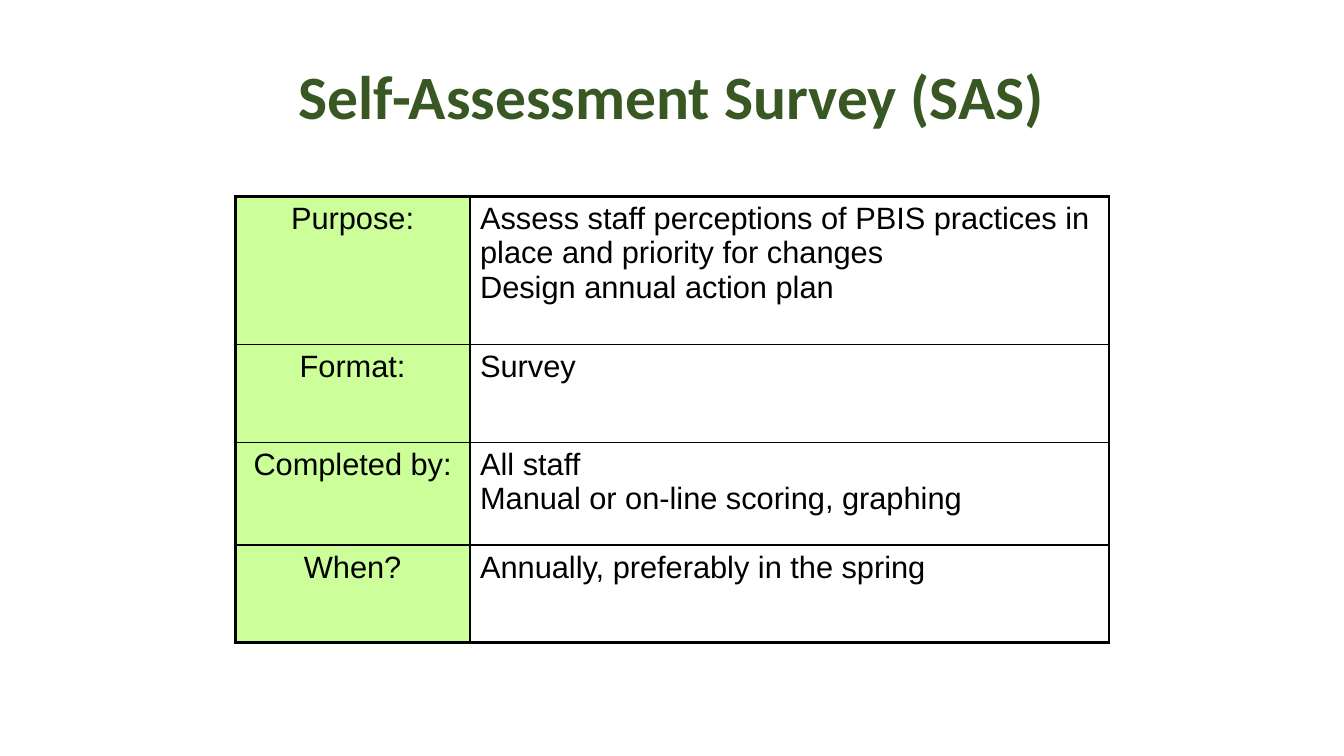
from dataclasses import dataclass

from lxml import etree
from pptx import Presentation
from pptx.dml.color import RGBColor
from pptx.enum import text
from pptx.oxml import ns
from pptx.util import Pt


@dataclass(frozen=True)
class Theme:
    title_font: str = "Calibri"
    body_font: str = "Arial"
    title_size: int = 44
    body_size: int = 22
    title_color: str = "385723"
    ink: str = "000000"
    label_fill: str = "CCFF99"
    outer_line: float = 2.25
    inner_line: float = 1


THEME = Theme()
TITLE_BOX = (156, 29, 648, 84)
TABLE_BOX = (168, 140.4, 624, 318.5)
COLUMN_WIDTHS = (167.75, 456.5)
ROW_HEIGHTS = (105.75, 69.75, 73.5, 69.75)
SURVEY_FACTS = [
    ("Purpose:", "Assess staff perceptions of PBIS practices in place "
                 "and priority for changes\nDesign annual action plan"),
    ("Format:", "Survey"),
    ("Completed by:", "All staff\nManual or on-line scoring, graphing"),
    ("When?", "Annually, preferably in the spring"),
]


def style_para(para, font, size, color, align, bold=False):
    para.alignment = align
    for span in para.runs:
        span.font.name = font
        span.font.size = Pt(size)
        span.font.bold = bold
        span.font.color.rgb = RGBColor.from_string(color)


def set_borders(cell, widths):
    """Draw the cell's sides; widths maps L, R, T, B, in that order, to points."""
    props = cell._tc.get_or_add_tcPr()
    for index, (side, width) in enumerate(widths.items()):
        line = etree.Element(ns.qn(f"a:ln{side}"), w=str(Pt(width)))
        fill = etree.SubElement(line, ns.qn("a:solidFill"))
        etree.SubElement(fill, ns.qn("a:srgbClr"), val=THEME.ink)
        props.insert(index, line)


def add_title(page, box, wording):
    title = page.shapes.title
    title.left, title.top, title.width, title.height = map(Pt, box)
    frame = title.text_frame
    frame.text = wording
    frame.word_wrap = True
    frame.vertical_anchor = text.MSO_ANCHOR.MIDDLE
    para = frame.paragraphs[0]
    para.line_spacing = 0.9
    style_para(para, THEME.title_font, THEME.title_size, THEME.title_color,
               text.PP_ALIGN.CENTER, bold=True)


def fill_cell(cell, wording, is_label):
    cell.text_frame.text = wording
    align = text.PP_ALIGN.CENTER if is_label else text.PP_ALIGN.LEFT
    for para in cell.text_frame.paragraphs:
        style_para(para, THEME.body_font, THEME.body_size, THEME.ink, align)
    if is_label:
        cell.fill.solid()
        cell.fill.fore_color.rgb = RGBColor.from_string(THEME.label_fill)
    else:
        cell.fill.background()


def add_fact_table(page, box, facts):
    """Place a table of labels and answers with a heavy outer frame."""
    last_row, last_col = len(facts) - 1, len(COLUMN_WIDTHS) - 1
    table = page.shapes.add_table(len(facts), len(COLUMN_WIDTHS), *map(Pt, box)).table
    table.first_row = table.horz_banding = False
    for column, width in zip(table.columns, COLUMN_WIDTHS):
        column.width = Pt(width)
    for row, height in zip(table.rows, ROW_HEIGHTS):
        row.height = Pt(height)
    for r, fact in enumerate(facts):
        for c, wording in enumerate(fact):
            cell = table.cell(r, c)
            fill_cell(cell, wording, is_label=c == 0)
            on_edge = {"L": c == 0, "R": c == last_col, "T": r == 0, "B": r == last_row}
            set_borders(cell, {side: THEME.outer_line if edge else THEME.inner_line
                               for side, edge in on_edge.items()})


def main():
    deck = Presentation()
    deck.slide_width, deck.slide_height = Pt(960), Pt(540)
    page = deck.slides.add_slide(deck.slide_layouts.get_by_name("Title Only"))
    add_title(page, TITLE_BOX, "Self-Assessment Survey (SAS)")
    add_fact_table(page, TABLE_BOX, SURVEY_FACTS)
    deck.save("out.pptx")


if __name__ == "__main__":
    main()
